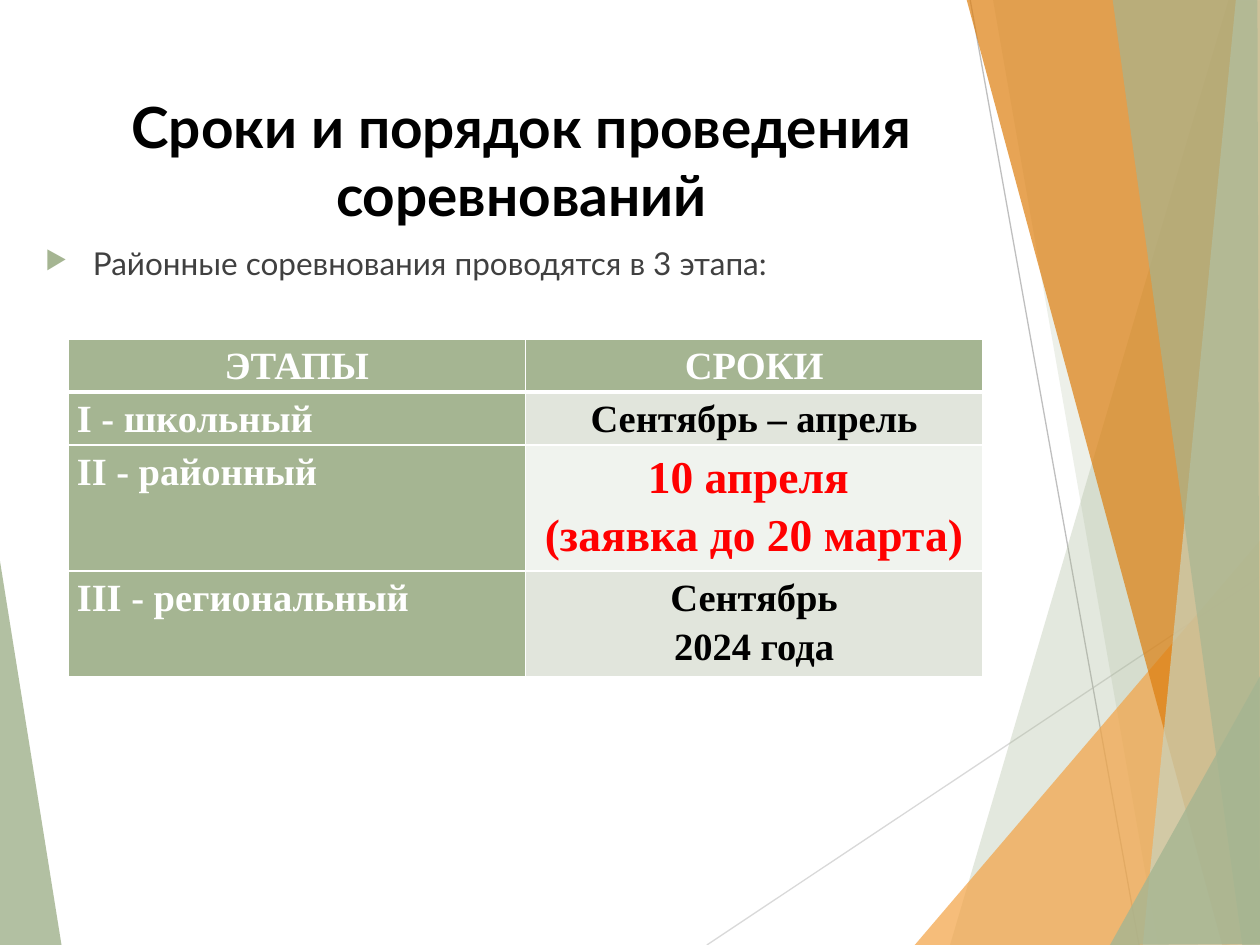
from dataclasses import dataclass

from lxml import etree
from pptx import Presentation
from pptx.dml.color import RGBColor
from pptx.enum import shapes, text
from pptx.oxml import ns
from pptx.util import Inches, Pt

SAGE = RGBColor(0xA5, 0xB5, 0x92)
PALE_SAGE = RGBColor(0xC9, 0xD3, 0xBE)
AMBER = RGBColor(0xF3, 0xA4, 0x47)
ORANGE = RGBColor(0xDD, 0x7E, 0x0E)
LIGHT_GREY = RGBColor(0xD9, 0xD9, 0xD9)
GREY = RGBColor(0xBF, 0xBF, 0xBF)
DARK_GREY = RGBColor(0x40, 0x40, 0x40)
BAND_DARK = RGBColor(0xE1, 0xE5, 0xDC)
BAND_LIGHT = RGBColor(0xF0, 0xF3, 0xEE)
WHITE = RGBColor(0xFF, 0xFF, 0xFF)
BLACK = RGBColor(0, 0, 0)
RED = RGBColor(0xFF, 0, 0)

CENTER = text.PP_ALIGN.CENTER
LEFT = text.PP_ALIGN.LEFT


@dataclass
class Facet:
    points: list[tuple[float, float]]
    color: RGBColor
    opacity: int  # percent


@dataclass
class Ray:
    start: tuple[float, float]
    end: tuple[float, float]
    color: RGBColor


@dataclass
class Entry:
    lines: list[str]
    fill: RGBColor
    color: RGBColor = WHITE
    align: text.PP_ALIGN = CENTER
    size: int = 22


LEFT_FACET = Facet([(-0.01, 4.39), (0.49, 7.51), (-0.01, 7.5)], SAGE, 85)
RAYS = [
    Ray((5.61, 7.5), (10.01, 4.57), LIGHT_GREY),
    Ray((7.7, 0), (9.04, 7.5), GREY),
]
RIGHT_FACETS = [
    Facet([(9.75, 0), (7.54, 7.5), (10.02, 7.51), (10.01, 0.01)], SAGE, 30),
    Facet([(7.88, -0.01), (9.19, 7.5), (10.01, 7.5), (10.01, -0.01)], SAGE, 20),
    Facet([(7.26, 7.5), (10, 4.29), (10.01, 7.5)], AMBER, 72),
    Facet([(7.67, -0.01), (9.7, 7.5), (10.01, 7.49), (10.01, -0.01)], ORANGE, 70),
    Facet([(9.81, -0.01), (9.07, 7.5), (10.01, 7.5), (10, -0.01)], PALE_SAGE, 70),
    Facet([(8.83, -0.01), (9.86, 7.5), (10, 7.5), (9.98, -0.01)], SAGE, 65),
    Facet([(8.81, 7.5), (10.01, 5.35), (10.01, 7.49)], SAGE, 80),
]

STAGES = [
    [Entry(["ЭТАПЫ"], SAGE), Entry(["СРОКИ"], SAGE)],
    [Entry(["I - школьный"], SAGE, align=LEFT),
     Entry(["Сентябрь – апрель"], BAND_DARK, BLACK)],
    [Entry(["II - районный"], SAGE, align=LEFT),
     Entry(["10 апреля ", "(заявка до 20 марта)"], BAND_LIGHT, RED, size=26)],
    [Entry(["III - региональный"], SAGE, align=LEFT),
     Entry(["Сентябрь", "2024 года"], BAND_DARK, BLACK)],
]
ROW_HEIGHTS = [0.39, 0.39, 0.92, 0.78]


def add_child(parent, tag: str, **attributes):
    child = etree.SubElement(parent, ns.qn(tag))
    for key, value in attributes.items():
        child.set(key, str(value))
    return child


def draw_facet(slide, facet: Facet) -> None:
    first, *others = [(Inches(x), Inches(y)) for x, y in facet.points]
    builder = slide.shapes.build_freeform(*first)
    builder.add_line_segments(others, close=True)
    shape = builder.convert_to_shape()
    shape.shadow.inherit = False
    shape.line.fill.background()
    shape.fill.solid()
    shape.fill.fore_color.rgb = facet.color
    color = shape._element.spPr.find(".//" + ns.qn("a:srgbClr"))
    add_child(color, "a:alpha", val=facet.opacity * 1000)


def draw_ray(slide, ray: Ray) -> None:
    line = slide.shapes.add_connector(
        shapes.MSO_CONNECTOR.STRAIGHT, *map(Inches, ray.start + ray.end))
    line.line.color.rgb = ray.color
    line.line.width = Pt(0.75)
    add_child(line._element.spPr, "a:effectLst")


def write(paragraph, words: str, color: RGBColor, **font_format) -> None:
    run = paragraph.add_run()
    run.text = words
    for key, value in font_format.items():
        setattr(run.font, key, value)
    run.font.color.rgb = color


def add_text_area(slide, left: float, top: float, width: float, height: float):
    frame = slide.shapes.add_textbox(*map(Inches, (left, top, width, height))).text_frame
    frame.word_wrap = True
    return frame.paragraphs[0]


def fill_cell(cell, entry: Entry, bottom_width: float) -> None:
    properties = cell._tc.get_or_add_tcPr()
    for side, width in {"L": 1, "R": 1, "T": 1, "B": bottom_width}.items():
        border = add_child(properties, f"a:ln{side}", w=Pt(width))
        add_child(add_child(border, "a:solidFill"), "a:srgbClr", val=WHITE)
    cell.fill.solid()
    cell.fill.fore_color.rgb = entry.fill
    margins = {"margin_left": 0.07, "margin_right": 0.07, "margin_top": 0, "margin_bottom": 0}
    for key, value in margins.items():
        setattr(cell, key, Inches(value))
    frame = cell.text_frame
    for index, words in enumerate(entry.lines):
        paragraph = frame.add_paragraph() if index else frame.paragraphs[0]
        paragraph.alignment = entry.align
        paragraph.line_spacing = 1.15
        write(paragraph, words, entry.color, name="Times New Roman",
              size=Pt(entry.size), bold=True)


def draw_stages(slide) -> None:
    table = slide.shapes.add_table(
        len(STAGES), 2, Inches(0.54), Inches(2.69),
        Inches(7.26), Inches(sum(ROW_HEIGHTS))).table
    for row, height in zip(table.rows, ROW_HEIGHTS):
        row.height = Inches(height)
    for row_index, entries in enumerate(STAGES):
        for column_index, entry in enumerate(entries):
            fill_cell(table.cell(row_index, column_index), entry,
                      bottom_width=1 if row_index else 3)


def main() -> None:
    presentation = Presentation()
    presentation.slide_width = Inches(10)
    presentation.slide_height = Inches(7.5)
    slide = presentation.slides.add_slide(presentation.slide_layouts[6])

    # Background decoration
    draw_facet(slide, LEFT_FACET)
    for ray in RAYS:
        draw_ray(slide, ray)
    for facet in RIGHT_FACETS:
        draw_facet(slide, facet)

    # Title
    title = add_text_area(slide, 0.67, 0.68, 6.94, 1.13)
    title.alignment = CENTER
    write(title, "Сроки и порядок проведения соревнований", BLACK,
          name="Lato", size=Pt(32.4), bold=True)

    # Introductory bullet
    intro = add_text_area(slide, 0.26, 1.89, 8.07, 0.5)
    write(intro, "Районные соревнования проводятся в 3 этапа:", DARK_GREY,
          name="Lato", size=Pt(18))
    properties = intro._p.get_or_add_pPr()
    properties.set("marL", str(Inches(0.38)))
    properties.set("indent", str(Inches(-0.38)))
    add_child(add_child(properties, "a:buClr"), "a:srgbClr", val=SAGE)
    add_child(properties, "a:buSzPct", val=80000)
    add_child(properties, "a:buChar", char="▶")

    # Table of stages and dates
    draw_stages(slide)

    presentation.save("out.pptx")


if __name__ == "__main__":
    main()
